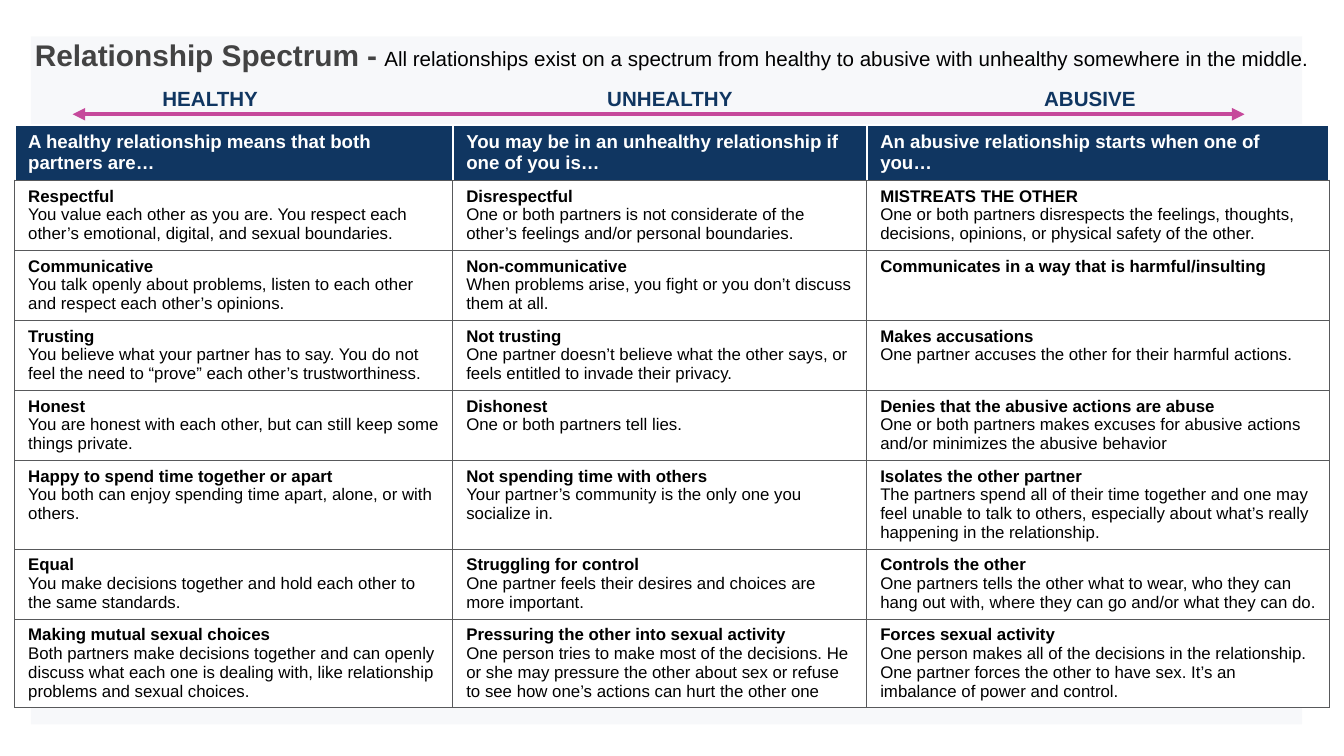
import pptx
import pptx.util
import pptx.oxml
import pptx.oxml.ns
import pptx.dml.color
import pptx.enum.shapes
import pptx.enum.text

Inches = pptx.util.Inches
Pt = pptx.util.Pt
ALIGN = pptx.enum.text.PP_ALIGN
ANCHOR = pptx.enum.text.MSO_ANCHOR
FIT = pptx.enum.text.MSO_AUTO_SIZE
NS = pptx.oxml.ns.nsdecls("a")

HEX = {"navy": "103661", "panel": "073763", "pink": "C6499B", "grey": "434343",
       "rule": "58595B", "black": "000000", "white": "FFFFFF"}

# Spectrum labels: text, left, width
LABELS = [("HEALTHY", 1.11, 0.93), ("UNHEALTHY", 4.42, 1.16), ("ABUSIVE", 7.67, 0.89)]

COLS = [3.26, 3.08, 3.44]
ROWS = [0.38, 0.51, 0.3, 0.42, 0.34, 0.45, 0.51, 0.52]

# Header row, then cells of a bold term and its meaning on the next line
TABLE = [
    ["A healthy relationship means that both partners are…",
     "You may be in an unhealthy relationship if one of you is…",
     "An abusive relationship starts when one of you…"],
    ["Respectful\nYou value each other as you are. You respect each other’s emotional, "
     "digital, and sexual boundaries.",
     "Disrespectful\nOne or both partners is not considerate of the other’s feelings "
     "and/or personal boundaries.",
     "MISTREATS THE OTHER\nOne or both partners disrespects the feelings, thoughts, "
     "decisions, opinions, or physical safety of the other."],
    ["Communicative\nYou talk openly about problems, listen to each other and respect "
     "each other’s opinions.",
     "Non-communicative\nWhen problems arise, you fight or you don’t discuss them at all.",
     "Communicates in a way that is harmful/insulting"],
    ["Trusting\nYou believe what your partner has to say. You do not feel the need to "
     "“prove” each other’s trustworthiness.",
     "Not trusting\nOne partner doesn’t believe what the other says, or feels entitled "
     "to invade their privacy.",
     "Makes accusations\nOne partner accuses the other for their harmful actions."],
    ["Honest\nYou are honest with each other, but can still keep some things private.",
     "Dishonest\nOne or both partners tell lies.",
     "Denies that the abusive actions are abuse\nOne or both partners makes excuses for "
     "abusive actions and/or minimizes the abusive behavior"],
    ["Happy to spend time together or apart\nYou both can enjoy spending time apart, "
     "alone, or with others.",
     "Not spending time with others\nYour partner’s community is the only one you "
     "socialize in.",
     "Isolates the other partner\nThe partners spend all of their time together and one "
     "may feel unable to talk to others, especially about what’s really happening in the "
     "relationship."],
    ["Equal\nYou make decisions together and hold each other to the same standards.",
     "Struggling for control\nOne partner feels their desires and choices are more "
     "important.",
     "Controls the other\nOne partners tells the other what to wear, who they can hang "
     "out with, where they can go and/or what they can do."],
    ["Making mutual sexual choices\nBoth partners make decisions together and can openly "
     "discuss what each one is dealing with, like relationship problems and sexual choices.",
     "Pressuring the other into sexual activity\nOne person tries to make most of the "
     "decisions. He or she may pressure the other about sex or refuse to see how one’s "
     "actions can hurt the other one",
     "Forces sexual activity\nOne person makes all of the decisions in the relationship. "
     "One partner forces the other to have sex. It’s an imbalance of power and control."],
]


def color(name):
    return pptx.dml.color.RGBColor.from_string(HEX[name])


def node(xml):
    return pptx.oxml.parse_xml(xml)


class Page:
    font = "Arial"

    def __init__(self, slide):
        self.slide = slide
        self.shapes = slide.shapes

    def style(self, para, size, hue, bold=False):
        for run in para.runs:
            font = run.font
            font.name, font.size, font.bold = self.font, Pt(size), bold
            font.color.rgb = color(hue)

    def panel(self, box, hue, alpha):
        kind = pptx.enum.shapes.MSO_SHAPE.RECTANGLE
        shape = self.shapes.add_shape(kind, *map(Inches, box))
        shape.shadow.inherit = False
        shape.line.fill.background()
        shape.fill.solid()
        shape.fill.fore_color.rgb = color(hue)
        tint = shape.element.spPr.find(".//" + pptx.oxml.ns.qn("a:srgbClr"))
        tint.append(node(f'<a:alpha {NS} val="{alpha * 1000}"/>'))

    def arrow(self, left, right, top, hue, width):
        kind = pptx.enum.shapes.MSO_CONNECTOR.STRAIGHT
        line = self.shapes.add_connector(kind, *map(Inches, (left, top, right, top)))
        line.line.color.rgb = color(hue)
        line.line.width = Pt(width)
        stroke = line.element.spPr.find(pptx.oxml.ns.qn("a:ln"))
        for end in ("headEnd", "tailEnd"):
            stroke.append(node(f'<a:{end} {NS} type="triangle"/>'))
        line.element.spPr.append(node(f"<a:effectLst {NS}/>"))

    def label(self, text, box):
        frame = self.shapes.add_textbox(*map(Inches, box)).text_frame
        frame.text = text
        frame.word_wrap = False
        frame.auto_size = FIT.SHAPE_TO_FIT_TEXT
        self.style(frame.paragraphs[0], 11, "navy", True)

    def holder(self, index, text, box, size, hue, bold=False):
        shape = self.slide.placeholders[index]
        shape.element.getparent().append(shape.element)  # bring to front
        shape.left, shape.top, shape.width, shape.height = map(Inches, box)
        frame = shape.text_frame
        frame.text = text
        frame.word_wrap = True
        frame.auto_size = FIT.NONE
        frame.vertical_anchor = ANCHOR.TOP
        frame.margin_left = frame.margin_right = Inches(0.1)
        frame.margin_top = frame.margin_bottom = Inches(0.1)
        para = frame.paragraphs[0]
        para.alignment = ALIGN.LEFT
        para.space_before = Pt(0)
        props = para._p.get_or_add_pPr()
        props.set("marL", "0")
        props.set("indent", "0")
        props.append(node(f"<a:buNone {NS}/>"))
        self.style(para, size, hue, bold)

    def edge(self, cell, side, hue, width):
        cell._tc.get_or_add_tcPr().append(node(
            f'<a:ln{side} {NS} w="{Pt(width)}"><a:solidFill>'
            f'<a:srgbClr val="{HEX[hue]}"/></a:solidFill></a:ln{side}>'))

    def cell(self, cell, text, head):
        cell.text = text
        for side in "LRTB":
            white = head and side != "B"
            self.edge(cell, side, *(("white", 1) if white else ("rule", 0.5)))
        cell.fill.solid()
        cell.fill.fore_color.rgb = color("navy" if head else "white")
        for i, para in enumerate(cell.text_frame.paragraphs):
            self.style(para, 10 if head else 9, "white" if head else "black", i == 0)

    def table(self, data, box):
        shape = self.shapes.add_table(len(data), len(data[0]), *map(Inches, box))
        table = shape.table
        table.first_row = table.horz_banding = False
        for col, width in zip(table.columns, COLS):
            col.width = Inches(width)
        for row, height in zip(table.rows, ROWS):
            row.height = Inches(height)
        shape.height = Inches(box[3])
        for r, texts in enumerate(data):
            for c, text in enumerate(texts):
                self.cell(table.cell(r, c), text, r == 0)


def main():
    deck = pptx.Presentation()
    deck.slide_width = Inches(10)
    deck.slide_height = deck.slide_width * 9 // 16
    page = Page(deck.slides.add_slide(deck.slide_layouts[1]))

    # Backdrop and spectrum arrow
    page.panel((0.23, 0.27, 9.46, 5.12), "panel", 3)
    page.arrow(0.54, 9.26, 0.85, "pink", 2.25)
    for text, left, width in LABELS:
        page.label(text, (left, 0.59, width, 0.29))

    # Title and lead sentence
    page.holder(0, "Relationship Spectrum -", (0.16, 0.17, 2.84, 0.51),
                16, "grey", True)
    page.holder(1, "All relationships exist on a spectrum from healthy to abusive with "
                "unhealthy somewhere in the middle.", (2.76, 0.24, 7.12, 0.43),
                11, "black")

    # Comparison table
    page.table(TABLE, (0.11, 0.93, 9.78, 4.58))
    deck.save("out.pptx")


if __name__ == "__main__":
    main()
